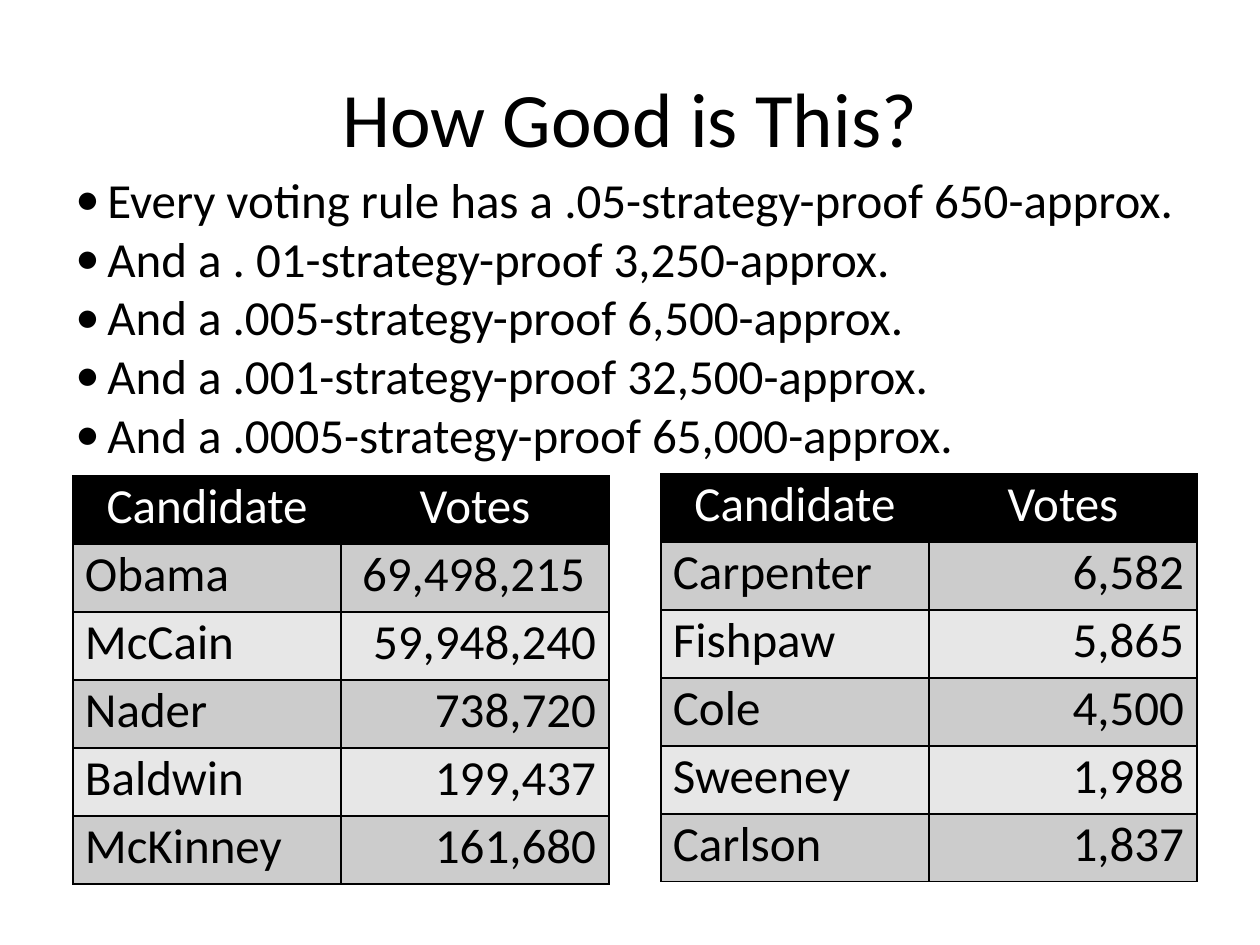
from lxml import etree
from pptx import Presentation
from pptx import util as u
from pptx.dml.color import RGBColor
from pptx.enum import text
from pptx.oxml import ns

PX = 914400 / 126
BLACK = RGBColor(0x00, 0x00, 0x00)
WHITE = RGBColor(0xFF, 0xFF, 0xFF)
DARK_BAND = RGBColor(0xCC, 0xCC, 0xCC)
LIGHT_BAND = RGBColor(0xE7, 0xE7, 0xE7)
LEFT, CENTER, RIGHT = text.PP_ALIGN.LEFT, text.PP_ALIGN.CENTER, text.PP_ALIGN.RIGHT


def px(*values):
    return [u.Emu(round(v * PX)) for v in values]


def write(p, words, size, color, align):
    p.alignment = align
    r = p.add_run()
    r.text = words
    for name, value in {"name": "Calibri", "size": u.Pt(size)}.items():
        setattr(r.font, name, value)
    r.font.color.rgb = color


prs = Presentation()
prs.slide_width, prs.slide_height = px(1260, 945)
s = prs.slides.add_slide(prs.slide_layouts[6])

# Title
tf = s.shapes.add_textbox(*px(63, 38, 1134, 158)).text_frame
tf.word_wrap = True
tf.vertical_anchor = text.MSO_ANCHOR.MIDDLE
write(tf.paragraphs[0], "How Good is This?", 44, BLACK, CENTER)

# Bulleted approximations
bullets = [
    "Every voting rule has a .05-strategy-proof 650-approx.",
    "And a . 01-strategy-proof 3,250-approx.",
    "And a .005-strategy-proof 6,500-approx.",
    "And a .001-strategy-proof 32,500-approx.",
    "And a .0005-strategy-proof 65,000-approx.",
]
indent = px(32)[0]
tf = s.shapes.add_textbox(*px(63, 163, 1144, 310)).text_frame
tf.word_wrap = True
for i, words in enumerate(bullets):
    p = tf.add_paragraph() if i else tf.paragraphs[0]
    pPr = p._p.get_or_add_pPr()
    pPr.set("marL", str(indent))
    pPr.set("indent", str(-indent))
    etree.SubElement(pPr, ns.qn("a:buFont"), typeface="Calibri")
    etree.SubElement(pPr, ns.qn("a:buChar"), char="•")
    write(p, words, 28, BLACK, LEFT)

# Vote tables
header = ("Candidate", "Votes")
national = [("Obama", "69,498,215 "), ("McCain", "59,948,240"), ("Nader", "738,720"),
            ("Baldwin", "199,437"), ("McKinney", "161,680")]
local = [("Carpenter", "6,582"), ("Fishpaw", "5,865"), ("Cole", "4,500"),
         ("Sweeney", "1,988"), ("Carlson", "1,837")]

for left, top, results in ((73, 476, national), (661, 474, local)):
    rows = [header] + results
    table = s.shapes.add_table(len(rows), 2, *px(left, top, 536, 68 * len(rows))).table
    for i, row in enumerate(rows):
        for j, words in enumerate(row):
            cell = table.cell(i, j)
            if i == 0:
                fill, color, align, margins = BLACK, WHITE, CENTER, (1, 1)
            else:
                fill, color = (DARK_BAND if i % 2 else LIGHT_BAND), BLACK
                align, margins = ((LEFT, (12, 1)), (RIGHT, (1, 13)))[j]
            cell.margin_left, cell.margin_right = px(*margins)
            cell.margin_top, cell.margin_bottom = px(1, 1)
            write(cell.text_frame.paragraphs[0], words, 28, color, align)

            # Cell borders come before the fill
            tcPr = cell._tc.get_or_add_tcPr()
            for side in ("lnL", "lnR", "lnT", "lnB"):
                ln = etree.SubElement(tcPr, ns.qn("a:" + side), w=str(u.Pt(1)))
                solid = etree.SubElement(ln, ns.qn("a:solidFill"))
                etree.SubElement(solid, ns.qn("a:srgbClr"), val=str(BLACK))
            cell.fill.solid()
            cell.fill.fore_color.rgb = fill

prs.save("out.pptx")
